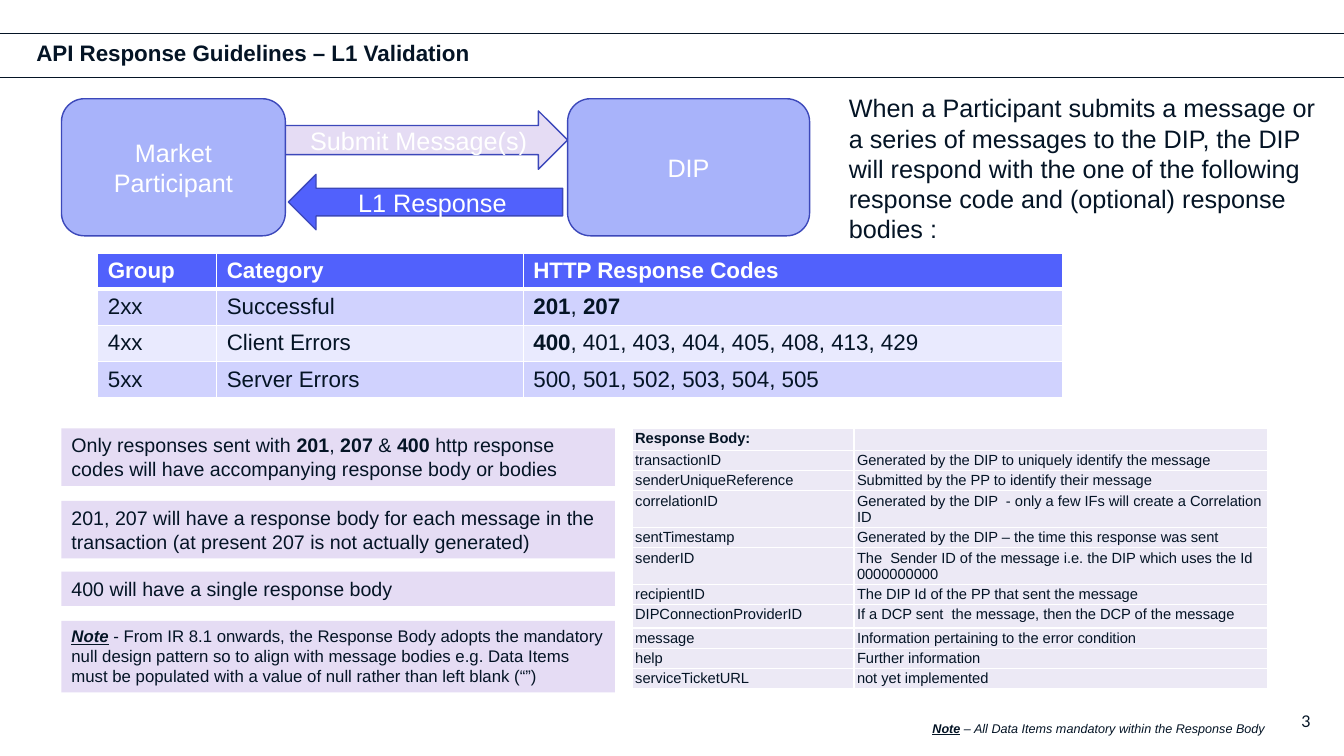
import pptx
import pptx.util
import pptx.dml.color
import pptx.enum.shapes
import pptx.enum.text
import pptx.oxml.ns
from dataclasses import dataclass
from lxml import etree

PX = 9144  # 100 px to the inch
SHAPE = pptx.enum.shapes.MSO_SHAPE
ALIGN = pptx.enum.text.PP_ALIGN
ANCHOR = pptx.enum.text.MSO_ANCHOR
FIT = pptx.enum.text.MSO_AUTO_SIZE
SIDES = ("left", "top", "right", "bottom")


@dataclass(frozen=True)
class Theme:
    ink: str = "041425"
    white: str = "FFFFFF"
    edge: str = "3C48BA"
    node: str = "A8B3FA"
    blue: str = "5161FC"
    lilac: str = "E5DCF4"
    pale: str = "ECE9F5"
    bands: tuple = ("D0D2FE", "E9EAFE")
    font: str = "Arial"
    folio: str = "Lato"
    large: float = 18
    head: float = 16
    note: float = 14
    small: float = 12
    page: float = 11.5
    cell: float = 10.5
    foot: float = 9


THEME = Theme()
NOTE = {"bold": True, "italic": True, "underline": True}

CODES = [
    ("Group", "Category", "HTTP Response Codes"),
    ("2xx", "Successful", "*201*, *207*"),
    ("4xx", "Client Errors", "*400*, 401, 403, 404, 405, 408, 413, 429"),
    ("5xx", "Server Errors", "500, 501, 502, 503, 504, 505"),
]
FIELDS = [
    ("*Response Body:*", ""),
    ("transactionID", "Generated by the DIP to uniquely identify the message"),
    ("senderUniqueReference", "Submitted by the PP to identify their message"),
    ("correlationID", "Generated by the DIP  - only a few IFs will create a Correlation ID"),
    ("sentTimestamp", "Generated by the DIP – the time this response was sent"),
    ("senderID", "The  Sender ID of the message i.e. the DIP which uses the Id 0000000000"),
    ("recipientID", "The DIP Id of the PP that sent the message"),
    ("DIPConnectionProviderID", "If a DCP sent  the message, then the DCP of the message"),
    ("message", "Information pertaining to the error condition"),
    ("help", "Further information"),
    ("serviceTicketURL", "not yet implemented"),
]
NOTES = [
    (0, 57, THEME.note, {"bold": True},
     "Only responses sent with *201*, *207* & *400* http response codes "
     "will have accompanying response body or bodies"),
    (72, 57, THEME.note, {},
     "201, 207 will have a response body for each message in the "
     "transaction (at present 207 is not actually generated)"),
    (142, 34, THEME.note, {}, "400 will have a single response body"),
    (191, 71, THEME.small, NOTE,
     "*Note* - From IR 8.1 onwards, the Response Body adopts the mandatory "
     "null design pattern so to align with message bodies e.g. Data Items "
     "must be populated with a value of null rather than left blank (“”)"),
]
INTRO = ("When a Participant submits a message or a series of messages to the DIP, "
         "the DIP will respond with the one of the following response code "
         "and (optional) response bodies :")


def emu(*px):
    return [pptx.util.Emu(n * PX) for n in px]


def paint(color, code):
    color.rgb = pptx.dml.color.RGBColor.from_string(code)


def put(thing, values):
    for name, value in values.items():
        setattr(thing, name, value)


def write(frame, text, size, color=THEME.ink, mark=None, para=None, base=None, **form):
    """Fill a text frame; parts between asterisks take the mark format."""
    put(frame, form)
    line = frame.paragraphs[0]
    put(line, para or {})
    for i, part in enumerate(text.split("*")):
        if part:
            run = line.add_run()
            run.text = part
            font = {"name": THEME.font, "size": pptx.util.Pt(size), "bold": False}
            put(run.font, {**font, **(base or {}), **((mark or {}) if i % 2 else {})})
            paint(run.font.color, color)
    if not text:
        end = etree.SubElement(line._p, pptx.oxml.ns.qn("a:endParaRPr"))
        end.set("sz", str(int(size * 100)))


def inset(px):
    return {f"margin_{side}": emu(px)[0] for side in SIDES}


def block(slide, kind, box, fill, edge=None):
    shape = slide.shapes.add_shape(kind, *emu(*box))
    shape.shadow.inherit = False
    shape.fill.solid()
    paint(shape.fill.fore_color, fill)
    if edge:
        shape.line.width = pptx.util.Pt(1)
        paint(shape.line.color, edge)
    else:
        shape.line.fill.background()
    return shape


def label(slide, box, text, size, **form):
    frame = slide.shapes.add_textbox(*emu(*box)).text_frame
    write(frame, text, size, **{"word_wrap": True, **form})


def border(cell, low):
    """Draw white cell edges; low is the width of the bottom one."""
    props = cell._tc.get_or_add_tcPr()
    for side, width in zip("LRTB", (1, 1, 1, low)):
        line = etree.SubElement(props, pptx.oxml.ns.qn("a:ln" + side))
        line.set("w", str(pptx.util.Pt(width)))
        fill = etree.SubElement(line, pptx.oxml.ns.qn("a:solidFill"))
        etree.SubElement(fill, pptx.oxml.ns.qn("a:srgbClr")).set("val", THEME.white)


def grid(slide, box, rows, widths, heights, style):
    """Build a table; style gives fill, cell format and bottom edge by row."""
    table = slide.shapes.add_table(len(rows), len(widths), *emu(*box)).table
    put(table, {"first_row": False, "horz_banding": False})
    for col, width in zip(table.columns, emu(*widths)):
        col.width = width
    for r, (texts, height) in enumerate(zip(rows, emu(*heights))):
        table.rows[r].height = height
        fill, form, margin, low = style(r)
        for cell, text in zip(table.rows[r].cells, texts):
            border(cell, low)
            cell.fill.solid()
            paint(cell.fill.fore_color, fill)
            put(cell, margin)
            write(cell.text_frame, text, mark={"bold": True}, **form)


def code_style(r):
    form = {"size": THEME.head}
    if r == 0:
        return THEME.blue, {**form, "color": THEME.white, "base": {"bold": True}}, {}, 3
    return THEME.bands[(r - 1) % 2], form, {}, 1


def field_style(r):
    margin = {**inset(3), "margin_top": emu(2)[0], "margin_bottom": emu(2)[0]}
    return THEME.pale, {"size": THEME.cell}, margin, 1


def header(slide, box):
    left, top, width, height = box
    for y in (top, top + height):
        rule = slide.shapes.add_connector(
            pptx.enum.shapes.MSO_CONNECTOR.STRAIGHT, *emu(left, y, left + width, y))
        rule.line.width = pptx.util.Pt(0.5)
        paint(rule.line.color, THEME.ink)
        etree.SubElement(rule._element.spPr, pptx.oxml.ns.qn("a:effectLst"))
    title = slide.shapes.title
    put(title, dict(zip(("left", "top", "width", "height"),
                        emu(left + 36, top + 11, 573, 20))))
    write(title.text_frame, "API Response Guidelines – L1 Validation", THEME.head,
          base={"bold": True}, para={"alignment": ALIGN.LEFT, "line_spacing": 0.9},
          vertical_anchor=ANCHOR.MIDDLE, auto_size=FIT.NONE, word_wrap=True, **inset(0))


def flow(slide, box):
    left, top, width, height = box
    parts = [
        (SHAPE.RIGHT_ARROW, (221, 12, 281, 58), THEME.lilac, "Submit Message(s)"),
        (SHAPE.ROUNDED_RECTANGLE, (0, 0, 222, height), THEME.node, "Market Participant"),
        (SHAPE.ROUNDED_RECTANGLE, (width - 240, 0, 240, height), THEME.node, "DIP"),
        (SHAPE.LEFT_ARROW, (225, 75, 272, 55), THEME.blue, "L1 Response"),
    ]
    for kind, (x, y, w, h), fill, text in parts:
        shape = block(slide, kind, (left + x, top + y, w, h), fill, THEME.edge)
        write(shape.text_frame, text, THEME.large, THEME.white,
              para={"alignment": ALIGN.CENTER}, vertical_anchor=ANCHOR.MIDDLE)


def notes(slide, box):
    left, top, width, _ = box
    for y, height, size, mark, text in NOTES:
        shape = block(slide, SHAPE.RECTANGLE, (left, top + y, width, height), THEME.lilac)
        write(shape.text_frame, text, size, mark=mark, para={"alignment": ALIGN.LEFT},
              vertical_anchor=ANCHOR.TOP, word_wrap=True, auto_size=FIT.SHAPE_TO_FIT_TEXT)


def footer(slide, box):
    left, top, width, height = box
    label(slide, (left, top + 15, 353, 25), "*Note* – All Data Items mandatory within "
          "the Response Body", THEME.foot, mark=NOTE, base={"italic": True},
          word_wrap=False, auto_size=FIT.SHAPE_TO_FIT_TEXT)
    label(slide, (left + 27, top, width - 27, height), "3", THEME.page,
          base={"name": THEME.folio}, para={"alignment": ALIGN.RIGHT},
          vertical_anchor=ANCHOR.MIDDLE, **inset(0))


def main():
    deck = pptx.Presentation()
    deck.slide_width, deck.slide_height = emu(1333, 750)
    slide = deck.slides.add_slide(deck.slide_layouts[5])
    header(slide, (0, 33, 1333, 44))
    flow(slide, (61, 98, 742, 136))
    grid(slide, (97, 251, 957, 144), CODES, (118, 304, 535), [36] * 4, code_style)
    grid(slide, (627, 425, 630, 213), FIELDS, (220, 410),
         [19] * 7 + [23] + [19] * 3, field_style)
    notes(slide, (61, 425, 549, 262))
    label(slide, (832, 87, 500, 162), INTRO, THEME.large, auto_size=FIT.SHAPE_TO_FIT_TEXT)
    footer(slide, (915, 695, 385, 40))
    deck.save("out.pptx")


if __name__ == "__main__":
    main()
